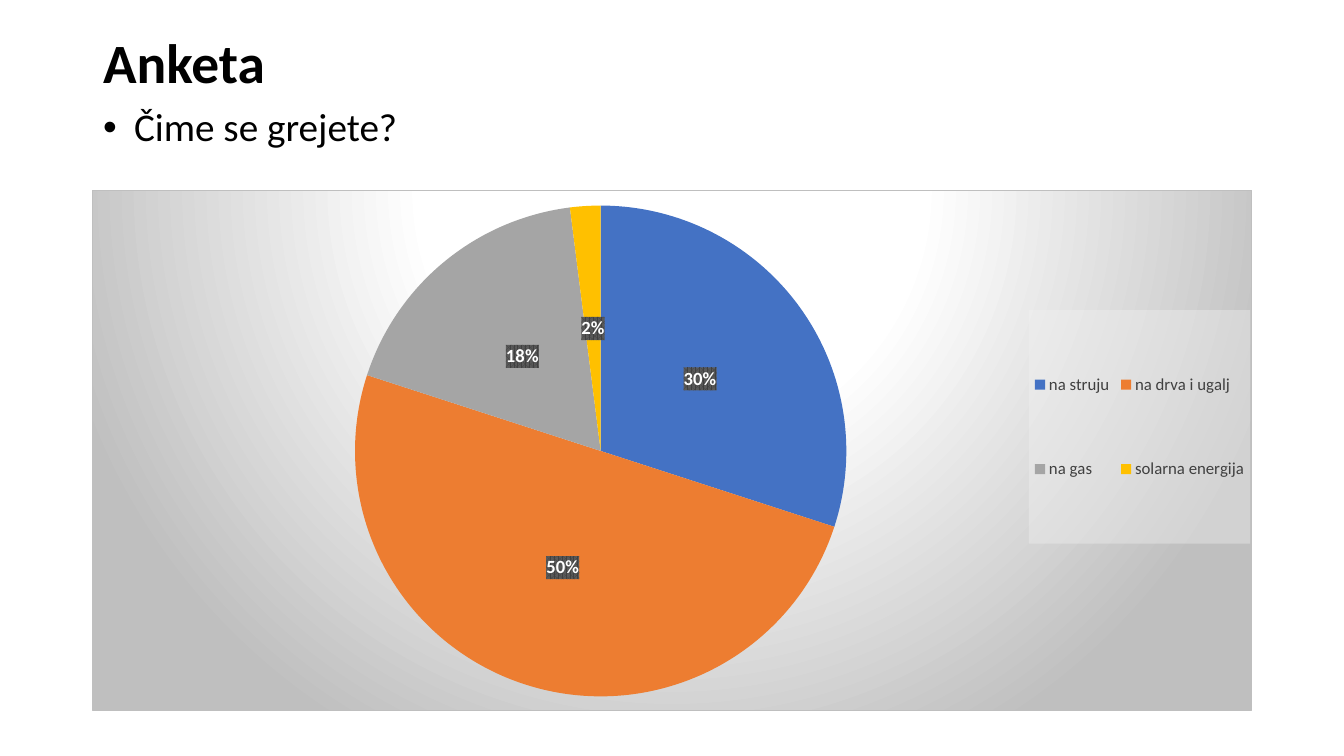
from lxml.etree import SubElement
from pptx import Presentation
from pptx.chart.data import CategoryChartData
from pptx.dml.color import RGBColor
from pptx.enum.chart import XL_CHART_TYPE, XL_LABEL_POSITION, XL_LEGEND_POSITION
from pptx.enum.text import MSO_ANCHOR, MSO_AUTO_SIZE, PP_ALIGN
from pptx.oxml import parse_xml
from pptx.oxml.ns import nsdecls, qn
from pptx.util import Emu, Pt

EMU_PER_PX = 914400 / 100.8
SLIDE_SIZE = (1344, 756)
CHART_BOX = (92, 190, 1160, 521)
PIE_BOX = (354, 205, 493, 492)
LEGEND_BOX = (1029, 310, 221, 234)

BLACK = RGBColor(0x00, 0x00, 0x00)
WHITE = RGBColor(0xFF, 0xFF, 0xFF)
LEGEND_TEXT = RGBColor(0x40, 0x40, 0x40)
LABEL_BACK = RGBColor(0x59, 0x59, 0x59)
LEGEND_BACK = RGBColor(0xF2, 0xF2, 0xF2)
FRAME_GREY = RGBColor(0xBF, 0xBF, 0xBF)
BLUE = RGBColor(0x44, 0x72, 0xC4)
ORANGE = RGBColor(0xED, 0x7D, 0x31)
GREY = RGBColor(0xA5, 0xA5, 0xA5)
YELLOW = RGBColor(0xFF, 0xC0, 0x00)

HEATING = [
    ("na struju", 30, BLUE),
    ("na drva i ugalj", 50, ORANGE),
    ("na gas", 18, GREY),
    ("solarna energija", 2, YELLOW),
]


def px(length):
    return Emu(round(length * EMU_PER_PX))


def format_font(font, size, color, bold=False):
    for name, value in {"name": "Calibri", "size": Pt(size), "bold": bold}.items():
        setattr(font, name, value)
    font.color.rgb = color


def place(placeholder, box):
    for side, length in zip(("left", "top", "width", "height"), box):
        setattr(placeholder, side, px(length))


def fill_placeholder(placeholder, box, text, anchor):
    """Move the placeholder, write its text and return the paragraph."""
    place(placeholder, box)
    frame = placeholder.text_frame
    frame.text = text
    frame.word_wrap = True
    frame.auto_size = MSO_AUTO_SIZE.NONE
    frame.vertical_anchor = anchor
    paragraph = frame.paragraphs[0]
    settings = {"alignment": PP_ALIGN.LEFT, "line_spacing": 0.9, "space_before": Pt(0)}
    for name, value in settings.items():
        setattr(paragraph, name, value)
    return paragraph


def add_bullet(paragraph, indent):
    properties = paragraph._p.get_or_add_pPr()
    properties.set("marL", str(px(indent)))
    properties.set("indent", str(-px(indent)))
    SubElement(properties, qn("a:buFont")).set("typeface", "Arial")
    SubElement(properties, qn("a:buChar")).set("char", "•")


def shape_properties(content):
    return parse_xml(f'<c:spPr {nsdecls("c", "a")}>{content}</c:spPr>')


def manual_layout(box, inner=False):
    """Express a box on the slide as fractions of the chart."""
    left, top, width, height = CHART_BOX
    fractions = {
        "x": (box[0] - left) / width,
        "y": (box[1] - top) / height,
        "w": box[2] / width,
        "h": box[3] / height,
    }
    target = '<c:layoutTarget val="inner"/>' if inner else ""
    modes = "".join(f'<c:{axis}Mode val="edge"/>' for axis in "xy")
    values = "".join(f'<c:{key} val="{value:.3f}"/>' for key, value in fractions.items())
    return parse_xml(
        f'<c:layout {nsdecls("c")}><c:manualLayout>{target}{modes}{values}'
        "</c:manualLayout></c:layout>"
    )


def add_frame(chart):
    """Give the chart its radial gradient and thin border."""
    stops = "".join(
        f'<a:gs pos="{percent * 1000}"><a:srgbClr val="{color}"/></a:gs>'
        for percent, color in ((0, WHITE), (39, WHITE), (100, FRAME_GREY))
    )
    chart._chartSpace.find(qn("c:chart")).addnext(shape_properties(
        f'<a:gradFill><a:gsLst>{stops}</a:gsLst><a:path path="circle">'
        '<a:fillToRect l="50000" t="-80000" r="50000" b="180000"/></a:path></a:gradFill>'
        f'<a:ln w="{Pt(0.75)}"><a:solidFill><a:srgbClr val="{FRAME_GREY}"/>'
        "</a:solidFill></a:ln>"
    ))


def add_percent_labels(plot):
    plot.has_data_labels = True
    labels = plot.data_labels
    settings = {
        "show_percentage": True,
        "show_value": False,
        "number_format": "0%",
        "number_format_is_linked": False,
        "position": XL_LABEL_POSITION.CENTER,
    }
    for name, value in settings.items():
        setattr(labels, name, value)
    format_font(labels.font, 13.3, WHITE, bold=True)
    labels._element.find(qn("c:numFmt")).addnext(shape_properties(
        f'<a:pattFill prst="pct75"><a:fgClr><a:srgbClr val="{LEGEND_TEXT}"/></a:fgClr>'
        f'<a:bgClr><a:srgbClr val="{LABEL_BACK}"/></a:bgClr></a:pattFill>'
    ))


def add_legend(chart):
    chart.has_legend = True
    legend = chart.legend
    legend.position = XL_LEGEND_POSITION.RIGHT
    legend.include_in_layout = False
    format_font(legend.font, 12, LEGEND_TEXT)
    for layout in legend._element.findall(qn("c:layout")):
        legend._element.remove(layout)
    overlay = legend._element.find(qn("c:overlay"))
    overlay.addprevious(manual_layout(LEGEND_BOX))
    overlay.addnext(shape_properties(
        f'<a:solidFill><a:srgbClr val="{LEGEND_BACK}"><a:alpha val="39000"/>'
        "</a:srgbClr></a:solidFill>"
    ))


def add_heating_pie(slide):
    survey = CategoryChartData()
    survey.categories = [source for source, _, _ in HEATING]
    survey.add_series("Series 1", [share for _, share, _ in HEATING])
    chart = slide.shapes.add_chart(
        XL_CHART_TYPE.PIE, *map(px, CHART_BOX), survey
    ).chart
    chart.has_title = False
    format_font(chart.font, 10, BLACK)
    add_frame(chart)

    plot = chart.plots[0]
    plot.vary_by_categories = True
    for index, (_, _, color) in enumerate(HEATING):
        slice_fill = plot.series[0].points[index].format.fill
        slice_fill.solid()
        slice_fill.fore_color.rgb = color
    add_percent_labels(plot)
    add_legend(chart)

    plot_area = chart._chartSpace.chart.plotArea
    for layout in plot_area.findall(qn("c:layout")):
        plot_area.remove(layout)
    plot_area.insert(0, manual_layout(PIE_BOX, inner=True))


def main():
    presentation = Presentation()
    presentation.slide_width, presentation.slide_height = map(px, SLIDE_SIZE)
    slide = presentation.slides.add_slide(presentation.slide_layouts[1])

    heading = fill_placeholder(
        slide.shapes.title, (93, 29, 1159, 74), "Anketa", MSO_ANCHOR.MIDDLE
    )
    format_font(heading.font, 39.6, BLACK, bold=True)

    question = fill_placeholder(
        slide.placeholders[1], (93, 103, 520, 57), "Čime se grejete?", MSO_ANCHOR.TOP
    )
    add_bullet(question, 31)
    format_font(question.font, 28, BLACK)

    add_heating_pie(slide)
    presentation.save("out.pptx")


if __name__ == "__main__":
    main()
